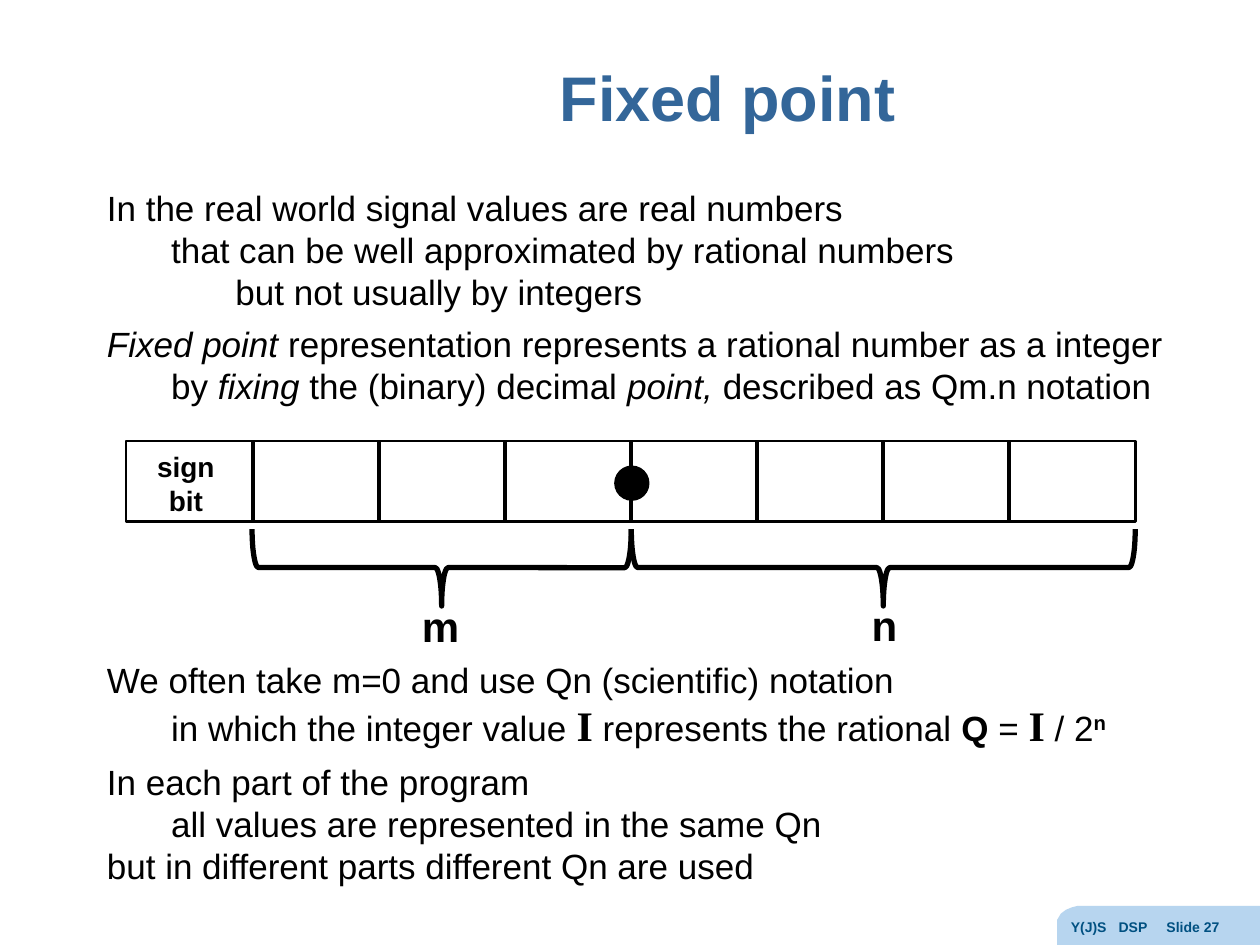
from lxml import etree
from pptx import Presentation
from pptx.dml.color import RGBColor
from pptx.enum.shapes import MSO_CONNECTOR, MSO_SHAPE
from pptx.enum.text import MSO_ANCHOR, PP_ALIGN
from pptx.oxml.ns import qn
from pptx.util import Inches, Pt

STRAIGHT = MSO_CONNECTOR.STRAIGHT
RECTANGLE = MSO_SHAPE.RECTANGLE
OVAL = MSO_SHAPE.OVAL
RIGHT_BRACE = MSO_SHAPE.RIGHT_BRACE
MIDDLE = MSO_ANCHOR.MIDDLE
LEFT = PP_ALIGN.LEFT
CENTER = PP_ALIGN.CENTER

BLACK = "000000"
WHITE = "FFFFFF"
TITLE_BLUE = "336699"
FOOTER_TEXT = "005081"
FOOTER_FILL = "B7D5EF"

INDENT = 0.51
REGISTER_LEFT = 1
REGISTER_TOP = 3.5
REGISTER_HEIGHT = 0.64
BIT_WIDTH = 1
BIT_COUNT = 8
POINT_BIT = 4

ITALIC = {"italic": True}
BOLD = {"bold": True}
SYMBOL = {"bold": True, "size": 24, "font": "Times New Roman"}
EXPONENT = {"bold": True, "raised": True}

OPENING = [
    (0, 0, [("In the real world signal values are real numbers", {})]),
    (1, 0, [("that can be well approximated by rational numbers", {})]),
    (2, 0, [("but not usually by integers", {})]),
    (0, 6, [("Fixed point ", ITALIC),
            ("representation represents a rational number as a integer", {})]),
    (1, 0, [("by ", {}), ("fixing", ITALIC), (" the (binary) decimal ", {}),
            ("point, ", ITALIC), ("described as Qm.n notation", {})]),
]
CLOSING = [
    (0, 0, [("We often take m=0 and use Qn (scientific) notation", {})]),
    (1, 0, [("in which the integer value ", {}), ("I", SYMBOL),
            (" represents the rational ", {}), ("Q", BOLD), (" = ", {}),
            ("I", SYMBOL), (" / 2", {}), ("n", EXPONENT)]),
    (0, 6, [("In each part of the program", {})]),
    (1, 0, [("all values are represented in the same Qn", {})]),
    (0, 0, [("but in different parts different Qn are used", {})]),
]


def color(hex_value):
    return RGBColor.from_string(hex_value)


def style_run(run, size=20, hex_value=BLACK, bold=False, italic=False,
              font="Arial", raised=False):
    run.font.size = Pt(size)
    run.font.name = font
    run.font.bold = bold
    run.font.italic = italic
    run.font.color.rgb = color(hex_value)
    if raised:
        run.font._element.set("baseline", "30000")


def add_text_frame(slide, left, top, width, height):
    box = slide.shapes.add_textbox(Inches(left), Inches(top), Inches(width), Inches(height))
    box.text_frame.word_wrap = True
    return box.text_frame


def add_label(slide, text, left, top, width, height, size, hex_value=BLACK, align=LEFT):
    frame = add_text_frame(slide, left, top, width, height)
    frame.text = text
    for paragraph in frame.paragraphs:
        paragraph.alignment = align
        for run in paragraph.runs:
            style_run(run, size, hex_value, bold=True)
    return frame


def add_prose(slide, lines, top, height):
    frame = add_text_frame(slide, 0.75, top, 8.68, height)
    for index, (level, space, pieces) in enumerate(lines):
        paragraph = frame.add_paragraph() if index else frame.paragraphs[0]
        paragraph.space_before = Pt(space)
        tallest = max(style.get("size", 20) for _, style in pieces)
        paragraph.line_spacing = Pt(tallest + 4)
        paragraph._p.get_or_add_pPr().set("marL", str(Inches(INDENT * level)))
        for text, style in pieces:
            run = paragraph.add_run()
            run.text = text
            style_run(run, **style)


def add_outlined(slide, kind, left, top, width, height, fill, line_width):
    shape = slide.shapes.add_shape(
        kind, Inches(left), Inches(top), Inches(width), Inches(height))
    shape.shadow.inherit = False
    shape.fill.solid()
    shape.fill.fore_color.rgb = color(fill)
    shape.line.color.rgb = color(BLACK)
    shape.line.width = Pt(line_width)
    return shape


def add_divider(slide, x):
    divider = slide.shapes.add_connector(
        STRAIGHT, Inches(x), Inches(REGISTER_TOP),
        Inches(x), Inches(REGISTER_TOP + REGISTER_HEIGHT))
    divider.line.color.rgb = color(BLACK)
    divider.line.width = Pt(2.25)
    etree.SubElement(divider._element.spPr, qn("a:effectLst"))


def add_brace(slide, start, end):
    depth, span = 0.61, end - start
    left = (start + end - depth) / 2
    top = 4.2 + (depth - span) / 2
    brace = add_outlined(slide, RIGHT_BRACE, left, top, depth, span, WHITE, 3)
    brace.rotation = 90


def add_register(slide):
    edges = [REGISTER_LEFT + 0.01 + BIT_WIDTH * bit for bit in range(BIT_COUNT + 1)]
    point_x = edges[POINT_BIT]
    add_outlined(slide, RECTANGLE, REGISTER_LEFT, REGISTER_TOP,
                 BIT_WIDTH * BIT_COUNT + 0.01, REGISTER_HEIGHT, WHITE, 1.5)
    for x in edges[1:-1]:
        add_divider(slide, x)
    add_label(slide, "sign\nbit", 0.95, 3.52, 1.05, 0.64, 16, align=CENTER)
    add_outlined(slide, OVAL, point_x - 0.13, 3.7, 0.27, 0.27, BLACK, 0.75)
    add_brace(slide, edges[1] - 0.01, point_x)
    add_brace(slide, point_x, edges[-1])
    add_label(slide, "m", 3.25, 4.72, 0.51, 0.5, 24)
    add_label(slide, "n", 6.82, 4.71, 0.51, 0.5, 24)


def add_title(slide):
    title = slide.shapes.title
    title.left, title.top = Inches(2.12), Inches(0.18)
    title.width, title.height = Inches(7.31), Inches(1.25)
    frame = title.text_frame
    frame.text = "Fixed point"
    frame.vertical_anchor = MIDDLE
    heading = frame.paragraphs[0]
    heading.alignment = CENTER
    heading.line_spacing = 0.9
    style_run(heading.runs[0], 36, TITLE_BLUE, bold=True)


def add_footer(slide):
    outline = [(10, 7.19), (10, 7.5), (8.39, 7.5), (8.39, 7.3), (8.42, 7.25),
               (8.46, 7.22), (8.51, 7.2), (8.55, 7.19)]
    points = [(Inches(x), Inches(y)) for x, y in outline]
    builder = slide.shapes.build_freeform(*points[0])
    builder.add_line_segments(points[1:], close=True)
    tab = builder.convert_to_shape()
    tab.shadow.inherit = False
    tab.fill.solid()
    tab.fill.fore_color.rgb = color(FOOTER_FILL)
    tab.line.fill.background()

    frame = add_label(slide, "Y(J)S\tDSP\tSlide 27", 8.4, 7.24, 1.6, 0.26, 8, FOOTER_TEXT)
    stops = etree.SubElement(frame.paragraphs[0]._p.get_or_add_pPr(), qn("a:tabLst"))
    for column in (1, 2):
        etree.SubElement(stops, qn("a:tab"), pos=str(Inches(0.38 * column)), algn="l")


def main():
    deck = Presentation()
    deck.slide_width, deck.slide_height = Inches(10), Inches(7.5)
    slide = deck.slides.add_slide(deck.slide_layouts[5])
    add_footer(slide)
    add_title(slide)
    add_prose(slide, OPENING, 1.43, 1.9)
    add_prose(slide, CLOSING, 5.18, 1.95)
    add_register(slide)
    deck.save("out.pptx")


if __name__ == "__main__":
    main()
